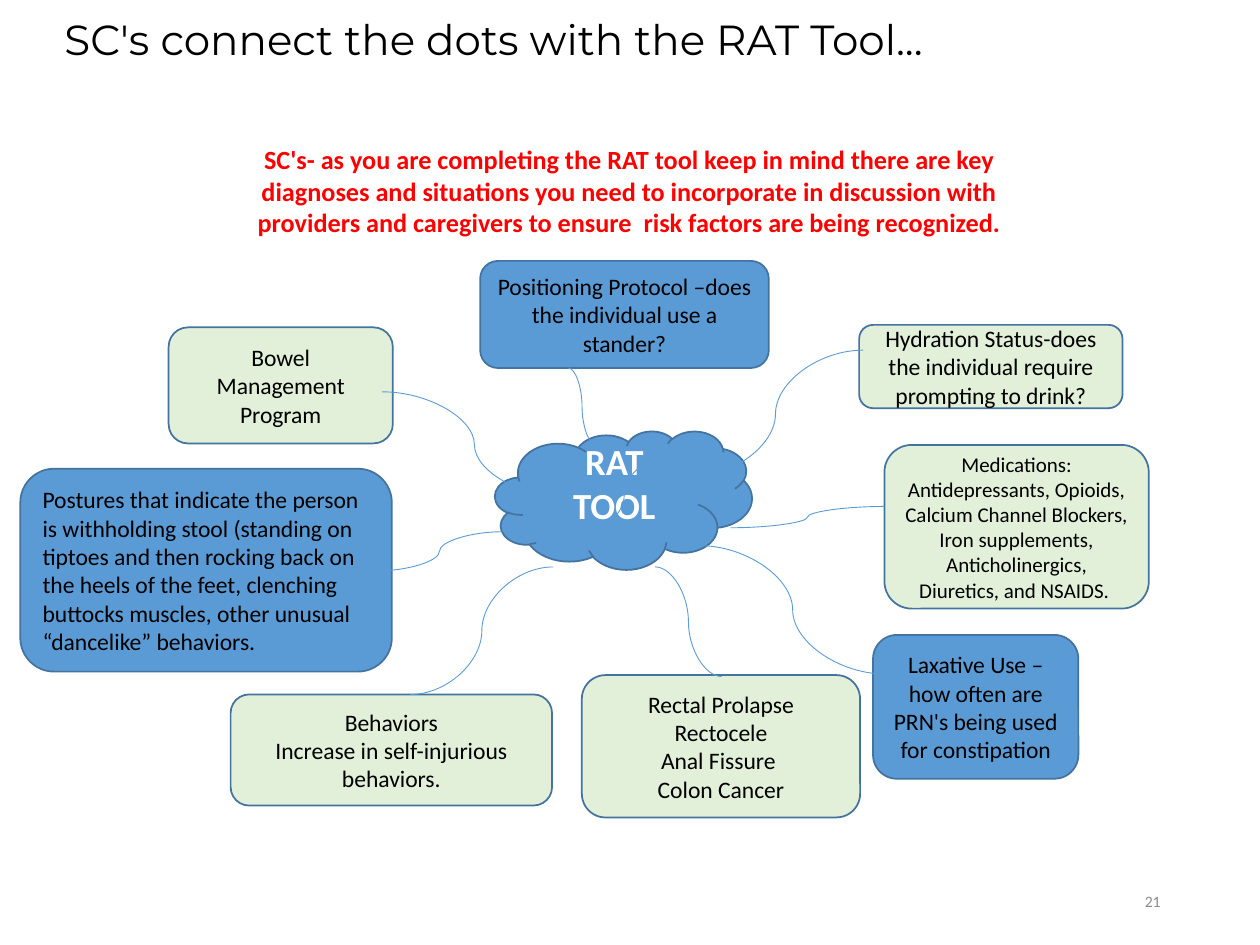
from lxml.etree import SubElement
from pptx import Presentation
from pptx.dml.color import RGBColor
from pptx.enum.shapes import MSO_CONNECTOR, MSO_SHAPE
from pptx.enum.text import MSO_ANCHOR, MSO_AUTO_SIZE, PP_ALIGN
from pptx.oxml.ns import qn
from pptx.util import Cm, Pt

HUES = {
    "blue": "5B9BD5", "green": "E2F0D9", "edge": "43739E", "white": "FFFFFF",
    "black": "000000", "red": "FF0000", "gray": "8C8C8C",
}


def hue(name):
    return RGBColor.from_string(HUES[name])


class Deck:
    font = "Calibri"
    size = 13.5

    def __init__(self, wide, high):
        self.prs = Presentation()
        self.prs.slide_width, self.prs.slide_height = Cm(wide), Cm(high)
        self.slide = self.prs.slides.add_slide(self.prs.slide_layouts[5])

    def label(self, frame, lines, size=None, color="black", bold=False,
              align=PP_ALIGN.CENTER, anchor=MSO_ANCHOR.MIDDLE, font=None):
        frame.word_wrap = True
        frame.auto_size = MSO_AUTO_SIZE.NONE
        frame.vertical_anchor = anchor
        for i, line in enumerate(lines):
            para = frame.paragraphs[0] if i == 0 else frame.add_paragraph()
            para.alignment = align
            run = para.add_run()
            run.text = line
            run.font.name = font or self.font
            run.font.size = Pt(size or self.size)
            run.font.bold = bold
            run.font.color.rgb = hue(color)

    def inset(self, frame):
        frame.margin_left = frame.margin_right = Cm(0.18)
        frame.margin_top = frame.margin_bottom = Cm(0.1)

    def title(self, box, text):
        shape = self.slide.shapes.title
        shape.left, shape.top, shape.width, shape.height = map(Cm, box)
        self.inset(shape.text_frame)
        self.label(shape.text_frame, [text], 24, align=PP_ALIGN.LEFT,
                   anchor=MSO_ANCHOR.TOP, font="Montserrat")

    def text(self, box, text, tight=False, **style):
        frame = self.slide.shapes.add_textbox(*map(Cm, box)).text_frame
        if tight:
            self.inset(frame)
        self.label(frame, [text], **style)

    def shape(self, kind, box, fill, edge="edge", lines=(), **style):
        shape = self.slide.shapes.add_shape(kind, *map(Cm, box))
        shape.shadow.inherit = False
        shape.fill.solid()
        shape.fill.fore_color.rgb = hue(fill)
        shape.line.color.rgb = hue(edge)
        shape.line.width = Pt(1)
        self.label(shape.text_frame, lines, **style)
        return shape

    def curve(self, ends):
        link = self.slide.shapes.add_connector(MSO_CONNECTOR.CURVE, *map(Cm, ends))
        link.line.color.rgb = hue("blue")
        link.line.width = Pt(0.5)
        SubElement(link._element.spPr, qn("a:effectLst"))


NOTES = [
    ((3.4, 6.6, 4.52, 2.34), "green", ["Bowel Management Program"], {}),
    ((9.68, 5.26, 5.82, 2.16), "blue",
     ["Positioning Protocol –does the individual use a stander?"], {}),
    ((17.32, 6.55, 5.31, 1.68), "green",
     ["Hydration Status-does the individual require prompting to drink?"], {}),
    ((17.83, 8.97, 5.33, 3.3), "green",
     ["Medications: Antidepressants, Opioids, Calcium Channel Blockers, "
      "Iron supplements, Anticholinergics, Diuretics, and NSAIDS. "], {"size": 12}),
    ((17.6, 12.8, 4.14, 2.9), "blue",
     ["Laxative Use –how often are PRN's being used for constipation"], {}),
    ((11.73, 13.61, 5.61, 2.87), "green",
     ["Rectal Prolapse", "Rectocele", "Anal Fissure ", "Colon Cancer"], {}),
    ((4.65, 14, 6.48, 2.24), "green",
     ["Behaviors", "Increase in self-injurious behaviors."], {}),
    ((0.41, 9.45, 7.49, 4.09), "blue",
     ["Postures that indicate the person is withholding stool (standing "
      "on tiptoes and then rocking back on the heels of the feet, "
      "clenching buttocks muscles, other unusual “dancelike” behaviors."],
     {"align": PP_ALIGN.LEFT}),
]

CURVES = [
    (14.1, 11, 17.86, 13.59),
    (17.4, 7.06, 13.87, 9.63),
    (17.83, 10.21, 14.73, 10.64),
    (14.55, 13.64, 13.21, 11.43),
    (10.13, 10.72, 7.59, 11.51),
    (11.15, 11.43, 8.28, 14),
    (12.01, 8.97, 11.46, 7.42),
    (13.44, 9.22, 11.73, 10.74),
    (11.43, 10.03, 7.7, 7.9),
]


def main():
    deck = Deck(25.4, 19.05)
    deck.title((1.12, 0.18, 21.54, 1.8), "SC's connect the dots with the RAT Tool...")
    deck.text((17.93, 17.65, 5.72, 1.02), "21", size=9, color="gray",
              align=PP_ALIGN.RIGHT)
    deck.shape(MSO_SHAPE.RECTANGLE, (3.18, 2.39, 19.05, 3.3), "white", "white")
    deck.text((4.19, 2.79, 16.99, 2.11),
              "SC's- as you are completing the RAT tool keep in mind there are key "
              "diagnoses and situations you need to incorporate in discussion with "
              "providers and caregivers to ensure  risk factors are being recognized.",
              tight=True, size=15, color="red", bold=True, anchor=MSO_ANCHOR.TOP)
    cloud = deck.shape(MSO_SHAPE.CLOUD, (9.98, 8.69, 5.18, 2.79), "blue",
                       lines=["RAT TOOL"], size=21, color="white", bold=True)
    cloud.text_frame.margin_bottom = Cm(0.7)
    for box, fill, lines, style in NOTES:
        deck.shape(MSO_SHAPE.ROUNDED_RECTANGLE, box, fill, lines=lines, **style)
    for ends in CURVES:
        deck.curve(ends)
    deck.prs.save("out.pptx")


if __name__ == "__main__":
    main()
